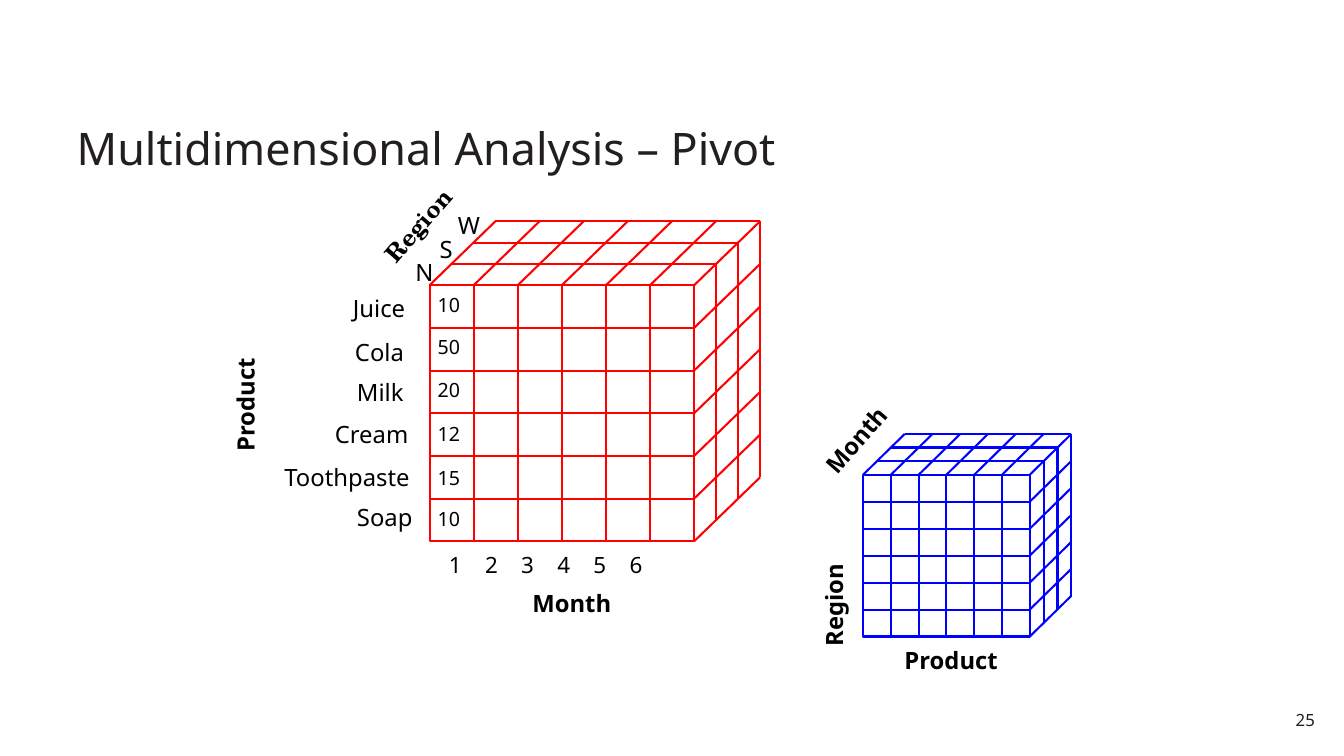
from dataclasses import dataclass
from typing import Optional

from lxml import etree
from pptx import Presentation
from pptx import util as u
from pptx.dml import color
from pptx.enum import shapes, text
from pptx.oxml import ns

SLIDE_WIDTH = u.Inches(13.33)
SLIDE_HEIGHT = u.Inches(7.5)
SANS = "Noto Sans"
SERIF = "TeX Gyre Schola"
BLACK = "000000"
CHARCOAL = "231F20"
FRONT_CELLS = 6
DEPTH_CELLS = 3
MONTH_PITCH = 2.69


@dataclass
class Label:
    words: str
    left: float
    top: float
    width: float
    height: float = 3.6
    size: float = 17
    bold: bool = False
    rotation: float = 0
    font: str = SANS
    ink: str = BLACK


@dataclass
class Cube:
    left: float
    top: float
    width: float
    height: float
    depth_across: float
    depth_up: float
    ink: str


def across(share: float) -> int:
    return round(SLIDE_WIDTH * share / 100)


def down(share: float) -> int:
    return round(SLIDE_HEIGHT * share / 100)


def rgb(value: str) -> color.RGBColor:
    return color.RGBColor.from_string(value)


def place(shape, label: Label) -> None:
    shape.left, shape.top = across(label.left), down(label.top)
    shape.width, shape.height = across(label.width), down(label.height)
    shape.rotation = label.rotation


def write(paragraph, label: Label) -> None:
    run = paragraph.add_run()
    run.text = label.words
    run.font.name = label.font
    run.font.size = u.Pt(label.size)
    run.font.bold = label.bold
    run.font.color.rgb = rgb(label.ink)


def set_margins(frame, side: float, end: float) -> None:
    frame.margin_left = frame.margin_right = u.Inches(side)
    frame.margin_top = frame.margin_bottom = u.Inches(end)
    frame.word_wrap = True


def add_label(slide, label: Label):
    shape = slide.shapes.add_textbox(0, 0, 0, 0)
    place(shape, label)
    set_margins(shape.text_frame, 0, 0)
    write(shape.text_frame.paragraphs[0], label)
    return shape


def add_tabs(paragraph, pitch: float, count: int) -> None:
    properties = paragraph._p.get_or_add_pPr()
    tabs = etree.SubElement(properties, ns.qn("a:tabLst"))
    for stop in range(1, count + 1):
        etree.SubElement(tabs, ns.qn("a:tab"), pos=str(across(pitch * stop)), algn="l")


def add_line(slide, ink: str, start: tuple[float, float], end: tuple[float, float],
             front=None, begin_site: Optional[int] = None,
             end_site: Optional[int] = None) -> None:
    line = slide.shapes.add_connector(
        shapes.MSO_CONNECTOR.STRAIGHT,
        across(start[0]), down(start[1]), across(end[0]), down(end[1]))
    line.line.color.rgb = rgb(ink)
    line.line.width = u.Pt(1.48)
    etree.SubElement(line._element.spPr, ns.qn("a:effectLst"))
    if begin_site is not None:
        line.begin_connect(front, begin_site)
    if end_site is not None:
        line.end_connect(front, end_site)


def add_cube(slide, cube: Cube) -> None:
    right, bottom = cube.left + cube.width, cube.top + cube.height
    front = slide.shapes.add_shape(
        shapes.MSO_SHAPE.RECTANGLE, across(cube.left), down(cube.top),
        across(cube.width), down(cube.height))
    front.shadow.inherit = False
    front.fill.background()
    front.line.color.rgb = rgb(cube.ink)
    front.line.width = u.Pt(1.48)

    for step in range(FRONT_CELLS + 1):
        x = cube.left + cube.width * step / FRONT_CELLS
        y = cube.top + cube.height * step / FRONT_CELLS
        middle = step * 2 == FRONT_CELLS
        top, left, base, side = (0, 1, 2, 3) if middle else (None,) * 4
        if 0 < step < FRONT_CELLS:
            add_line(slide, cube.ink, (cube.left, y), (right, y), front, left, side)
            add_line(slide, cube.ink, (x, bottom), (x, cube.top), front, base, top)
        add_line(slide, cube.ink, (x, cube.top),
                 (x + cube.depth_across, cube.top - cube.depth_up), front, top)
        if step > 0:
            add_line(slide, cube.ink, (right, y),
                     (right + cube.depth_across, y - cube.depth_up), front, side)

    for step in range(1, DEPTH_CELLS + 1):
        shift = cube.depth_across * step / DEPTH_CELLS
        rise = cube.depth_up * step / DEPTH_CELLS
        corner = (right + shift, cube.top - rise)
        add_line(slide, cube.ink, (cube.left + shift, cube.top - rise), corner)
        add_line(slide, cube.ink, corner, (right + shift, bottom - rise))


TITLE = Label("Multidimensional Analysis – Pivot", 5.1, 10.13, 89.8, 13.6, 32, ink=CHARCOAL)
PAGE = Label("25", 94.9, 93.07, 3.53, 4.13, 12, ink=CHARCOAL)
MONTHS = Label("\t".join(str(month) for month in range(1, 7)), 33.4, 72.93, 18.08, 3.87, 16)

CUBES = [
    Cube(31.96, 37.73, 19.69, 33.87, 4.9, 8.45, "FF0000"),
    Cube(64.22, 62.8, 12.4, 21.4, 3.1, 5.4, "0000FF"),
]

SALES = [("10", 38.8), ("50", 44.27), ("20", 50), ("12", 55.87), ("15", 61.6), ("10", 67.07)]

LABELS = [Label(amount, 32.56, top, 2.25, size=14) for amount, top in SALES] + [
    Label("Juice", 26.26, 38.8, 4.65),
    Label("Cola", 26.41, 44.67, 4.05),
    Label("Milk", 26.56, 50, 4.65),
    Label("Cream", 24.91, 55.47, 6),
    Label("Toothpaste", 21.16, 61.2, 9.9),
    Label("Soap", 26.56, 66.53, 4.65),
    Label("N", 30.91, 34.13, 1.5),
    Label("S", 32.71, 31.07, 1.35),
    Label("W", 34.06, 27.87, 2.03),
    Label("Month", 39.61, 77.87, 8.78, 3.2, bold=True),
    Label("Region", 27.61, 27.07, 7.73, 3.73, bold=True, rotation=311, font=SERIF),
    Label("Product", 14.55, 51.33, 7.35, 3.73, bold=True, rotation=270),
    Label("Product", 67.29, 85.47, 9.3, bold=True),
    Label("Month", 60.69, 54.53, 8.1, 5.33, bold=True, rotation=311),
    Label("Region", 57.84, 75.87, 8.55, 4.13, bold=True, rotation=270),
]


def main() -> None:
    presentation = Presentation()
    presentation.slide_width, presentation.slide_height = SLIDE_WIDTH, SLIDE_HEIGHT
    slide = presentation.slides.add_slide(presentation.slide_layouts[5])

    title = slide.shapes.title
    place(title, TITLE)
    set_margins(title.text_frame, 0.08, 0.04)
    title.text_frame.vertical_anchor = text.MSO_ANCHOR.BOTTOM
    heading = title.text_frame.paragraphs[0]
    heading.alignment = text.PP_ALIGN.LEFT
    heading.line_spacing = 0.9
    write(heading, TITLE)

    page = add_label(slide, PAGE)
    set_margins(page.text_frame, 0.08, 0.06)
    page.text_frame.paragraphs[0].alignment = text.PP_ALIGN.RIGHT

    for cube in CUBES:
        add_cube(slide, cube)
    for label in LABELS:
        add_label(slide, label)
    months = add_label(slide, MONTHS)
    add_tabs(months.text_frame.paragraphs[0], MONTH_PITCH, FRONT_CELLS - 1)

    presentation.save("out.pptx")


if __name__ == "__main__":
    main()
